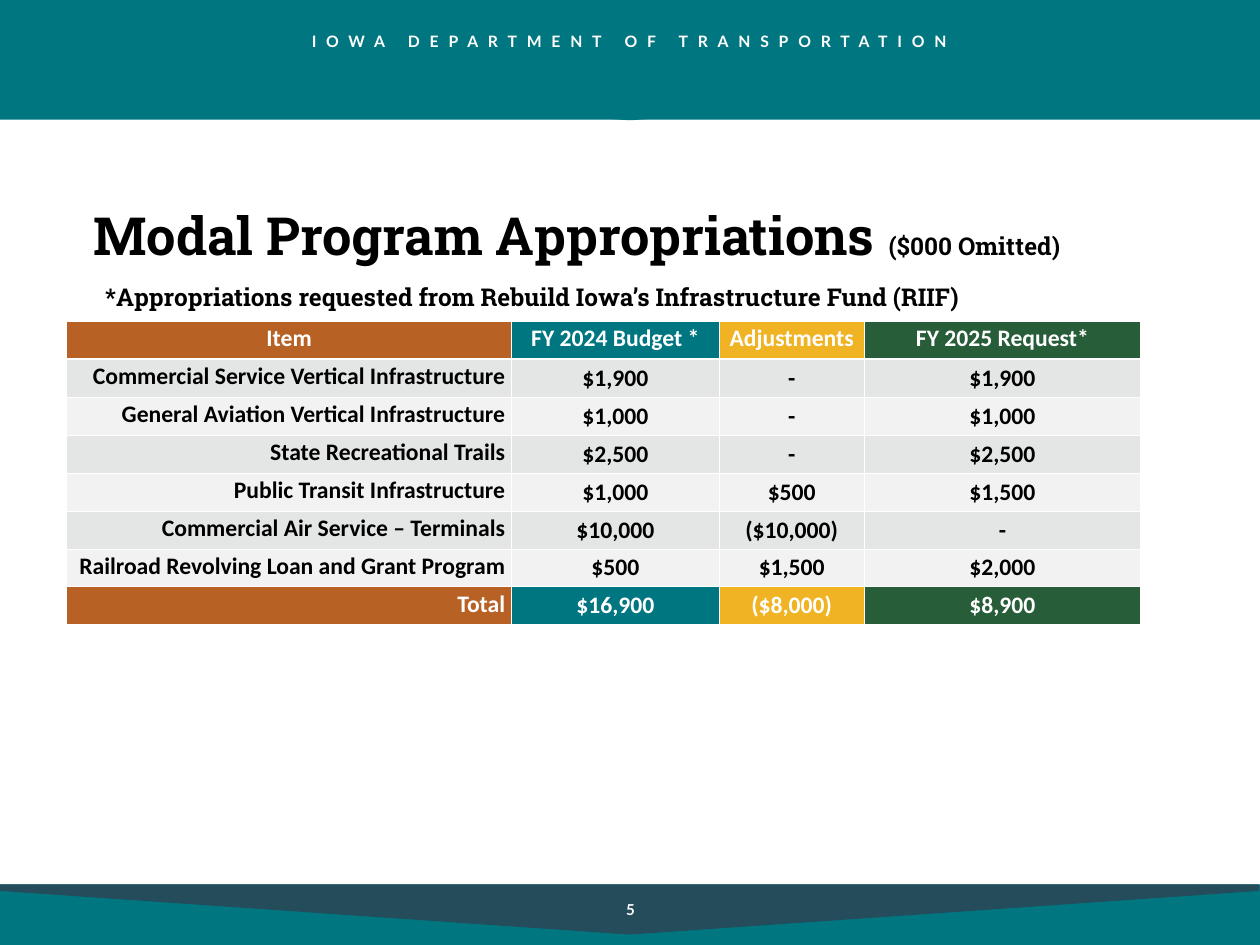
from dataclasses import dataclass

from lxml import etree
from pptx import Presentation
from pptx import util as u
from pptx.dml.color import RGBColor
from pptx.enum import shapes, text
from pptx.oxml.ns import qn

COLORS = {
    "teal": "007681", "slate": "244C5A", "rust": "B86125", "gold": "F0B323",
    "green": "275D38", "grey": "E4E5E5", "pale": "F2F2F2",
    "white": "FFFFFF", "black": "000000",
}
LEFT, CENTER, RIGHT = (text.PP_ALIGN.LEFT, text.PP_ALIGN.CENTER,
                       text.PP_ALIGN.RIGHT)
TOP, MIDDLE = text.MSO_ANCHOR.TOP, text.MSO_ANCHOR.MIDDLE


@dataclass
class Band:
    left: float
    top: float
    height: float
    width: float = 50.85


@dataclass
class Wedge:
    top: float
    shoulder: float
    tip: float
    color: str
    width: float = 50.77


@dataclass
class Label:
    words: str
    left: float
    top: float
    width: float
    height: float
    font: str
    size: float
    color: str = "white"
    align: text.PP_ALIGN = CENTER
    anchor: text.MSO_ANCHOR = TOP
    spacing: float = 0


BANDS = [Band(0, 0, 4.83), Band(-0.05, 35.66, 2.49)]
WEDGES = [Wedge(35.66, 35.92, 37.67, "slate"), Wedge(2.87, 3.1, 4.84, "teal")]
LABELS = [
    Label("IOWA DEPARTMENT OF TRANSPORTATION", 0, 1.14, 50.75, 1.02,
          "Lato", 18, spacing=11.2),
    Label("5", 22.48, 35.64, 5.87, 2.03, "Lato", 17.2, anchor=MIDDLE),
    Label("*Appropriations requested from Rebuild Iowa’s Infrastructure Fund (RIIF)",
          3.99, 11.25, 42.04, 1.45, "Roboto Slab", 28, "black", LEFT),
]
TITLE_RUNS = [("Modal Program Appropriations", 60), (" ", 65),
              ("($000 Omitted)", 28)]

COLUMN_WIDTHS = [17.93, 8.38, 5.84, 11.15]
COLUMN_COLORS = ["rust", "teal", "gold", "green"]
ROW_HEIGHT = 1.53
ROWS = [
    ("Item", "FY 2024 Budget *", "Adjustments", "FY 2025 Request*"),
    ("Commercial Service Vertical Infrastructure", "$1,900", "-", "$1,900"),
    ("General Aviation Vertical Infrastructure", "$1,000", "-", "$1,000"),
    ("State Recreational Trails", "$2,500", "-", "$2,500"),
    ("Public Transit Infrastructure", "$1,000", "$500", "$1,500"),
    ("Commercial Air Service – Terminals", "$10,000", "($10,000)", "-"),
    ("Railroad Revolving Loan and Grant Program", "$500", "$1,500", "$2,000"),
    ("Total", "$16,900", "($8,000)", "$8,900"),
]


def rgb(name: str) -> RGBColor:
    return RGBColor.from_string(COLORS[name])


def set_font(p, font: str, size: float, color: str) -> None:
    p.font.name, p.font.size, p.font.bold = font, u.Pt(size), True
    p.font.color.rgb = rgb(color)


def paint(sp, color: str) -> None:
    sp.shadow.inherit = False
    sp.fill.solid()
    sp.fill.fore_color.rgb = rgb(color)
    sp.line.fill.background()


def add_band(s, band: Band) -> None:
    sp = s.shapes.add_shape(shapes.MSO_SHAPE.RECTANGLE, u.Cm(band.left),
                            u.Cm(band.top), u.Cm(band.width), u.Cm(band.height))
    paint(sp, "teal")


def add_wedge(s, w: Wedge) -> None:
    mid = w.width / 2
    points = [(w.width, w.top), (w.width, w.shoulder), (mid + 0.15, w.tip),
              (mid - 0.15, w.tip), (0, w.shoulder)]
    builder = s.shapes.build_freeform(0, u.Cm(w.top))
    builder.add_line_segments([(u.Cm(x), u.Cm(y)) for x, y in points])
    paint(builder.convert_to_shape(), w.color)


def add_label(s, label: Label) -> None:
    sp = s.shapes.add_textbox(u.Cm(label.left), u.Cm(label.top),
                              u.Cm(label.width), u.Cm(label.height))
    tf = sp.text_frame
    tf.word_wrap = True
    tf.vertical_anchor = label.anchor
    p = tf.paragraphs[0]
    p.alignment = label.align
    r = p.add_run()
    r.text = label.words
    set_font(p, label.font, label.size, label.color)
    if label.spacing:
        r._r.get_or_add_rPr().set("spc", str(round(label.spacing * 100)))


def fill_title(s) -> None:
    sp = s.shapes.title
    sp.left, sp.top = u.Cm(3.51), u.Cm(7.8)
    sp.width, sp.height = u.Cm(43.82), u.Cm(3.48)
    tf = sp.text_frame
    tf.word_wrap = True
    tf.auto_size = text.MSO_AUTO_SIZE.NONE
    tf.vertical_anchor = MIDDLE
    p = tf.paragraphs[0]
    p.alignment, p.line_spacing = LEFT, 0.9
    set_font(p, "Roboto Slab", 60, "black")
    for words, size in TITLE_RUNS:
        r = p.add_run()
        r.text = words
        r.font.size = u.Pt(size)


def set_borders(cell, top: float, bottom: float) -> None:
    tc_pr = cell._tc.get_or_add_tcPr()
    sides = [("lnL", 1), ("lnR", 1), ("lnT", top), ("lnB", bottom)]
    for i, (side, width) in enumerate(sides):
        ln = etree.Element(qn(f"a:{side}"), w=str(u.Pt(width)))
        fill = etree.SubElement(ln, qn("a:solidFill"))
        etree.SubElement(fill, qn("a:srgbClr"), val=COLORS["white"])
        tc_pr.insert(i, ln)


def add_budget_table(s) -> None:
    last = len(ROWS) - 1
    table = s.shapes.add_table(
        len(ROWS), len(COLUMN_WIDTHS), u.Cm(2.69), u.Cm(12.95),
        u.Cm(sum(COLUMN_WIDTHS)), u.Cm(ROW_HEIGHT * len(ROWS))).table
    for column, width in zip(table.columns, COLUMN_WIDTHS):
        column.width = u.Cm(width)
    for i, row in enumerate(ROWS):
        table.rows[i].height = u.Cm(ROW_HEIGHT)
        colored = i in (0, last)
        for j, words in enumerate(row):
            cell = table.cell(i, j)
            cell.text = words
            cell.vertical_anchor = TOP if i == 0 or j == 0 else MIDDLE
            p = cell.text_frame.paragraphs[0]
            p.alignment = RIGHT if j == 0 and i > 0 else CENTER
            set_font(p, "Calibri", 27, "white" if colored else "black")
            stripe = "grey" if i % 2 else "pale"
            cell.fill.solid()
            cell.fill.fore_color.rgb = rgb(COLUMN_COLORS[j] if colored else stripe)
            set_borders(cell, top=3 if i == 1 else 1, bottom=3 if i == 0 else 1)


def main() -> None:
    prs = Presentation()
    prs.slide_width, prs.slide_height = u.Cm(50.8), u.Cm(38.1)
    s = prs.slides.add_slide(prs.slide_layouts[5])

    # Header and footer bands
    for band in BANDS:
        add_band(s, band)
    for wedge in WEDGES:
        add_wedge(s, wedge)

    # Title, table and labels
    fill_title(s)
    add_budget_table(s)
    for label in LABELS:
        add_label(s, label)

    prs.save("out.pptx")


if __name__ == "__main__":
    main()
